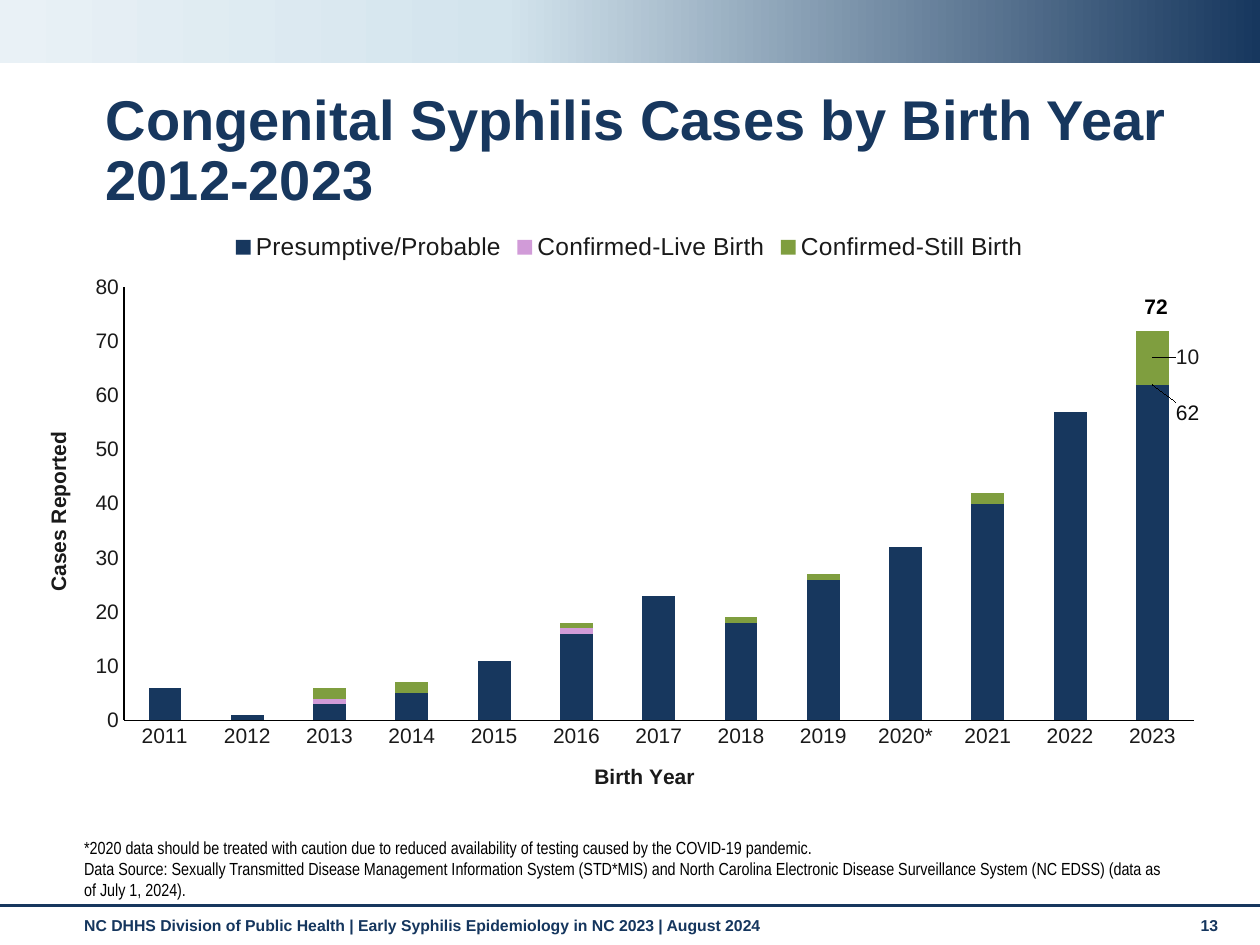
import copy

import pptx
import pptx.chart.data
import pptx.dml.color
import pptx.enum.chart
import pptx.enum.shapes
import pptx.enum.text
import pptx.oxml
import pptx.oxml.ns
import pptx.util
from pptx.util import Inches

HUES = {"navy": "17375E", "foot": "15365E", "sky": "D3E4ED", "ice": "E9F1F6",
        "pink": "D19BD8", "green": "7F9E3F", "ink": "1A1A1A", "black": "000000",
        "tag": "0D0D0D"}
YEARS = [f"{year}*" if year == 2020 else str(year) for year in range(2011, 2024)]
CASES = [
    ("Presumptive/Probable", "navy", (6, 1, 3, 5, 11, 16, 23, 18, 26, 32, 40, 57, 62)),
    ("Confirmed-Live Birth", "pink", (0, 0, 1, 0, 0, 1, 0, 0, 0, 0, 0, 0, 0)),
    ("Confirmed-Still Birth", "green", (0, 0, 2, 2, 0, 1, 0, 1, 1, 0, 2, 0, 10)),
]


def hue(name):
    """Return the named colour."""
    return pptx.dml.color.RGBColor.from_string(HUES[name])


def style(font, size, color="ink", bold=False, face="Arial"):
    """Set size, colour, weight and face of a font."""
    font.size, font.bold, font.name = pptx.util.Pt(size), bold, face
    font.color.rgb = hue(color)


def write(slide, box, text, anchor="TOP", align="LEFT", space=None, **form):
    """Add a wrapped text box, one paragraph for each line of text."""
    frame = slide.shapes.add_textbox(*map(Inches, box)).text_frame
    frame.word_wrap = True
    frame.vertical_anchor = getattr(pptx.enum.text.MSO_ANCHOR, anchor)
    frame.text = text
    for para in frame.paragraphs:
        para.alignment = getattr(pptx.enum.text.PP_ALIGN, align)
        para.line_spacing = space
        for run in para.runs:
            style(run.font, **form)


def add_band(slide, box):
    """Draw the gradient band in the box."""
    band = slide.shapes.add_shape(pptx.enum.shapes.MSO_SHAPE.RECTANGLE, *map(Inches, box))
    band.shadow.inherit = False
    band.line.fill.background()
    band.fill.gradient()
    band.fill.gradient_angle = 180
    last = band.fill.gradient_stops[1]._gs
    last.addprevious(copy.deepcopy(last))
    stops = zip(band.fill.gradient_stops, ("navy", "sky", "ice"), (0, 0.6, 1))
    for stop, name, place in stops:
        stop.color.rgb = hue(name)
        stop.position = place


def add_foot(slide, box):
    """Draw the rule, footer and page number in the box."""
    left, top, width, height = box
    rule = slide.shapes.add_connector(
        pptx.enum.shapes.MSO_CONNECTOR.STRAIGHT,
        *map(Inches, (left, top, left + width, top)))
    rule.line.color.rgb = hue("navy")
    rule.line.width = pptx.util.Pt(1.75)
    rule._element.spPr.append(pptx.oxml.parse_xml(
        f'<a:effectLst {pptx.oxml.ns.nsdecls("a")}/>'))
    form = {"size": 9, "color": "foot", "bold": True}
    write(slide, (left + 0.57, top + 0.03, 8.74, height - 0.03),
          "NC DHHS Division of Public Health | Early Syphilis Epidemiology in NC 2023"
          " | August 2024", **form)
    write(slide, (left + 9.43, top + 0.03, 0.44, height - 0.03), "13", **form)


def layout(x, y, size=None):
    """Return a manual chart layout: a shift, or a plot area when sized."""
    parts = {"x": x, "y": y}
    if size:
        parts = {"layoutTarget": "inner", "xMode": "edge", "yMode": "edge",
                 **parts, "w": size[0], "h": size[1]}
    body = "".join(f'<c:{key} val="{val}"/>' for key, val in parts.items())
    return pptx.oxml.parse_xml(
        f'<c:layout {pptx.oxml.ns.nsdecls("c")}><c:manualLayout>{body}'
        '</c:manualLayout></c:layout>')


def set_axis(axis, title):
    """Give an axis its title, line and labels."""
    axis.has_major_gridlines = False
    axis.major_tick_mark = pptx.enum.chart.XL_TICK_MARK.NONE
    axis.format.line.color.rgb = hue("black")
    axis.format.line.width = pptx.util.Pt(0.75)
    style(axis.tick_labels.font, 12)
    frame = axis.axis_title.text_frame
    frame.text = title
    style(frame.paragraphs[0].runs[0].font, 12, bold=True)


def tag(series, spot, shift, color):
    """Label the last point of a series, moved beside its bar."""
    label = series.points[len(YEARS) - 1].data_label
    style(label.font, 12, color)
    label.position = getattr(pptx.enum.chart.XL_LABEL_POSITION, spot)
    index = series._element.xpath(".//c:dLbl/c:idx")[0]
    index.addnext(layout(*shift))


def add_cases(slide, box):
    """Draw the stacked case chart and its total in the box."""
    data = pptx.chart.data.CategoryChartData()
    data.categories = YEARS
    for name, _, vals in CASES:
        data.add_series(name, vals)
    chart = slide.shapes.add_chart(
        pptx.enum.chart.XL_CHART_TYPE.COLUMN_STACKED, *map(Inches, box), data).chart
    chart.has_title = False
    style(chart.font, 12)
    chart.has_legend = True
    chart.legend.position = pptx.enum.chart.XL_LEGEND_POSITION.TOP
    chart.legend.include_in_layout = False
    style(chart.legend.font, 14)
    set_axis(chart.category_axis, "Birth Year")
    set_axis(chart.value_axis, "Cases Reported")
    chart.value_axis.minimum_scale, chart.value_axis.maximum_scale = 0, 80
    chart.value_axis.major_unit = 10
    plot = chart.plots[0]
    plot.gap_width, plot.overlap, plot.vary_by_categories = 150, 100, False
    for series, (_, color, _) in zip(plot.series, CASES):
        series.format.fill.solid()
        series.format.fill.fore_color.rgb = hue(color)
    tag(plot.series[0], "INSIDE_END", (0.03, 0.02), "tag")
    tag(plot.series[2], "CENTER", (0.03, 0), "ink")
    area = chart._chartSpace.chart.plotArea
    for old in area.xpath("c:layout"):
        area.remove(old)
    area.insert(0, layout(0.07, 0.11, (0.91, 0.7)))
    left, top = box[:2]
    write(slide, (left + 8.47, top + 0.54, 0.75, 0.32), "72", align="CENTER",
          size=12, color="black", bold=True)


def main():
    """Build and save the slide."""
    deck = pptx.Presentation()
    deck.slide_width, deck.slide_height = Inches(10), Inches(7.5)
    slide = deck.slides.add_slide(deck.slide_layouts[6])
    add_band(slide, (0, 0, 10, 0.5))
    add_foot(slide, (0, 7.19, 10, 0.31))
    write(slide, (0.74, 0.68, 9.13, 0.6),
          "Congenital Syphilis Cases by Birth Year\v2012-2023",
          space=0.9, size=32, color="navy", bold=True)
    write(slide, (0.57, 6.83, 8.74, 0.36),
          "*2020 data should be treated with caution due to reduced availability of "
          "testing caused by the COVID-19 pandemic.\n"
          "Data Source: Sexually Transmitted Disease Management Information System "
          "(STD*MIS) and North Carolina Electronic Disease Surveillance System "
          "(NC EDSS) (data as of July 1, 2024).",
          anchor="BOTTOM", size=10, color="black", face="Arial Narrow")
    add_cases(slide, (0.33, 1.74, 9.33, 4.91))
    deck.save("out.pptx")


if __name__ == "__main__":
    main()
